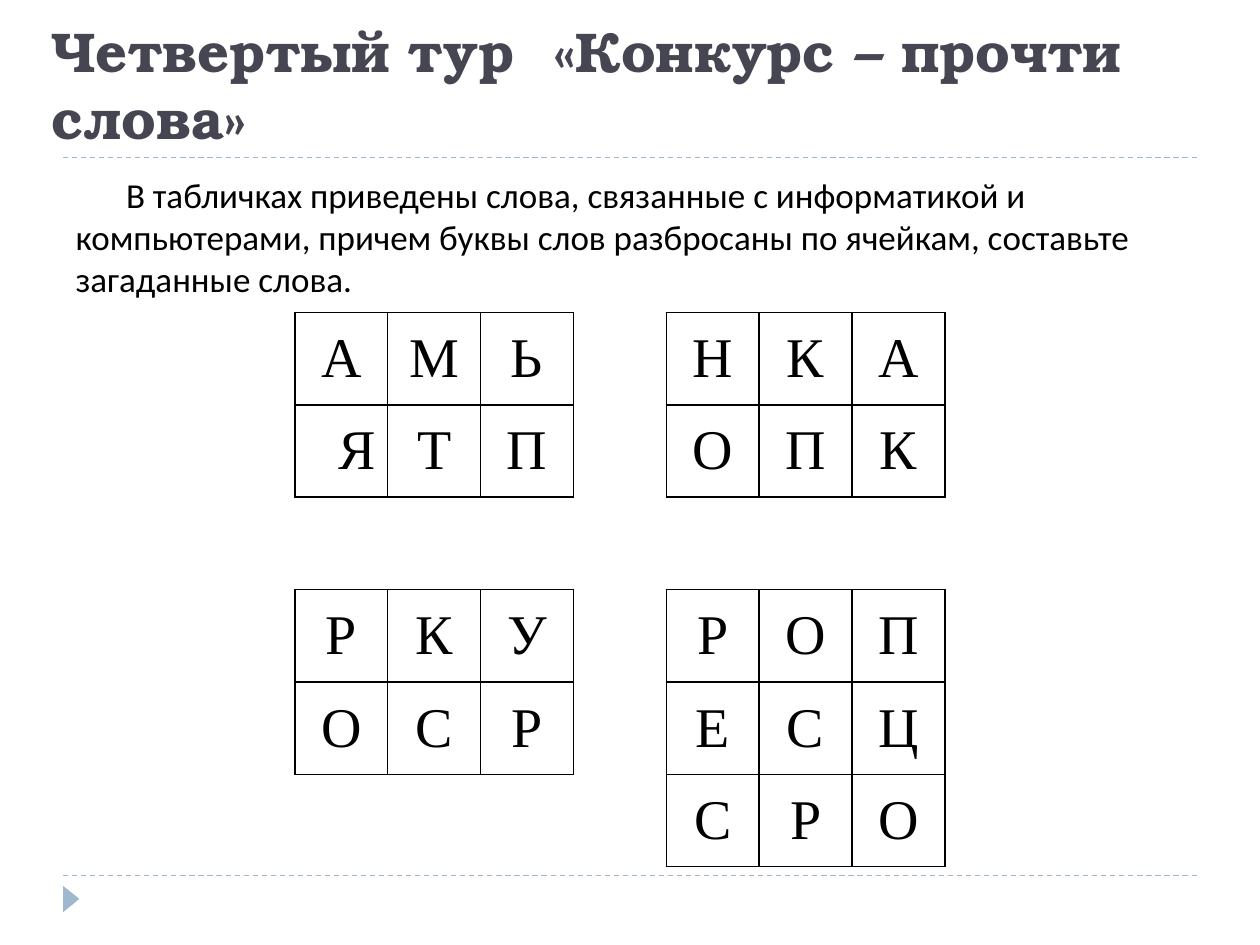
from dataclasses import dataclass

from lxml.etree import SubElement
from pptx import Presentation
from pptx.dml.color import RGBColor
from pptx.enum.dml import MSO_LINE
from pptx.enum.shapes import MSO_CONNECTOR, MSO_SHAPE
from pptx.enum.text import MSO_ANCHOR, MSO_AUTO_SIZE, PP_ALIGN
from pptx.oxml.ns import qn
from pptx.util import Inches, Pt


@dataclass(frozen=True)
class Theme:
    title_color: str = "464653"
    text_color: str = "000000"
    accent: str = "9FB8CD"
    title_font: str = "TeX Gyre Bonum"
    body_font: str = "Calibri"
    letter_font: str = "Times New Roman"
    title_size: int = 32
    body_size: int = 20
    letter_size: int = 32
    rule_width: float = 0.75
    border_width: float = 1


class SlideBuilder:
    """Holds the theme and the current slide; lengths are in grid units."""

    COLUMNS, ROWS = 100, 75

    def __init__(self, prs, theme):
        self.theme = theme
        self.s = prs.slides.add_slide(prs.slide_layouts[1])
        self.col = prs.slide_width / self.COLUMNS
        self.row = prs.slide_height / self.ROWS

    def box(self, x, y, w, h):
        return (round(x * self.col), round(y * self.row),
                round(w * self.col), round(h * self.row))

    def add_run(self, p, text, font, size, color, bold=False):
        r = p.add_run()
        r.text = text
        r.font.name, r.font.size, r.font.bold = font, Pt(size), bold
        r.font.color.rgb = RGBColor.from_string(color)

    def placeholder(self, index, box, anchor):
        sp = self.s.placeholders[index]
        sp.left, sp.top, sp.width, sp.height = self.box(*box)
        tf = sp.text_frame
        tf.word_wrap, tf.auto_size = True, MSO_AUTO_SIZE.NONE
        tf.vertical_anchor = anchor
        p = tf.paragraphs[0]
        p.alignment = PP_ALIGN.LEFT
        return p

    def title(self, text, box):
        t = self.theme
        p = self.placeholder(0, box, MSO_ANCHOR.BOTTOM)
        self.add_run(p, text, t.title_font, t.title_size, t.title_color, True)

    def body(self, text, box, indent):
        t = self.theme
        p = self.placeholder(1, box, MSO_ANCHOR.TOP)
        p.space_before = Pt(6)
        pPr = p._p.get_or_add_pPr()
        pPr.set("marL", "0")
        pPr.set("indent", str(round(indent * self.col)))
        SubElement(pPr, qn("a:buNone"))
        self.add_run(p, text, t.body_font, t.body_size, t.text_color)

    def rule(self, y, x1, x2):
        x1, y, x2, _ = self.box(x1, y, x2, 0)
        line = self.s.shapes.add_connector(MSO_CONNECTOR.STRAIGHT, x1, y, x2, y)
        line.line.color.rgb = RGBColor.from_string(self.theme.accent)
        line.line.width = Pt(self.theme.rule_width)
        line.line.dash_style = MSO_LINE.DASH
        SubElement(line._element.spPr, qn("a:effectLst"))

    def triangle(self, box, rotation):
        sp = self.s.shapes.add_shape(MSO_SHAPE.ISOSCELES_TRIANGLE, *self.box(*box))
        sp.rotation = rotation
        sp.shadow.inherit = False
        sp.fill.solid()
        sp.fill.fore_color.rgb = RGBColor.from_string(self.theme.accent)
        sp.line.fill.background()

    def border(self, cell, position, side, shown):
        ln = cell._tc.get_or_add_tcPr().makeelement(qn("a:ln" + side), {})
        ln.set("w", str(Pt(self.theme.border_width)))
        if shown:
            fill = SubElement(ln, qn("a:solidFill"))
            SubElement(fill, qn("a:srgbClr"), val=self.theme.text_color)
        else:
            SubElement(ln, qn("a:noFill"))
        cell._tc.tcPr.insert(position, ln)

    def letter_table(self, rows, box, shifted):
        """Draw an edge wherever a cell on either side of it has a letter."""
        t = self.theme
        n_rows, n_cols = len(rows), len(rows[0])
        table = self.s.shapes.add_table(n_rows, n_cols, *self.box(*box)).table
        table.first_row = table.horz_banding = False

        def filled(i, j):
            return 0 <= i < n_rows and 0 <= j < n_cols and rows[i][j] != " "

        sides = {"L": (0, -1), "R": (0, 1), "T": (-1, 0), "B": (1, 0)}
        for i, row in enumerate(rows):
            for j, letter in enumerate(row):
                cell = table.cell(i, j)
                cell.fill.background()
                for k, (side, (di, dj)) in enumerate(sides.items()):
                    self.border(cell, k, side,
                                filled(i, j) or filled(i + di, j + dj))
                if not filled(i, j):
                    continue
                cell.vertical_anchor = MSO_ANCHOR.MIDDLE
                cell.margin_left = cell.margin_right = Inches(0.07)
                cell.margin_top = cell.margin_bottom = 0
                if (i, j) in shifted:
                    cell.margin_left = Inches(0.32)
                p = cell.text_frame.paragraphs[0]
                p.alignment = PP_ALIGN.CENTER
                self.add_run(p, letter, t.letter_font, t.letter_size, t.text_color)


def main():
    prs = Presentation()
    prs.slide_width, prs.slide_height = Inches(10), Inches(7.5)
    slide = SlideBuilder(prs, Theme())

    # Frame: dashed rules and corner marker
    for y in (69.5, 12.5):
        slide.rule(y, 5, 95)
    slide.triangle((4.6, 70.7, 2.1, 1.3), 90)

    # Heading and task
    slide.title("Четвертый тур  «Конкурс – прочти слова»", (3.1, 1.7, 91.9, 10.8))
    slide.body("В табличках приведены слова, связанные с информатикой и "
               "компьютерами, причем буквы слов разбросаны по ячейкам, "
               "составьте загаданные слова.", (5, 13.3, 92.7, 9.3), indent=4)

    # Four word puzzles in one table, a space being an empty cell
    puzzles = ["АМЬ НКА",
               "ЯТП ОПК",
               "       ",
               "РКУ РОП",
               "ОСР ЕСЦ",
               "    СРО"]
    slide.letter_table(puzzles, (23.4, 24.8, 51.6, 44), shifted={(1, 0)})

    prs.save("out.pptx")


if __name__ == "__main__":
    main()
